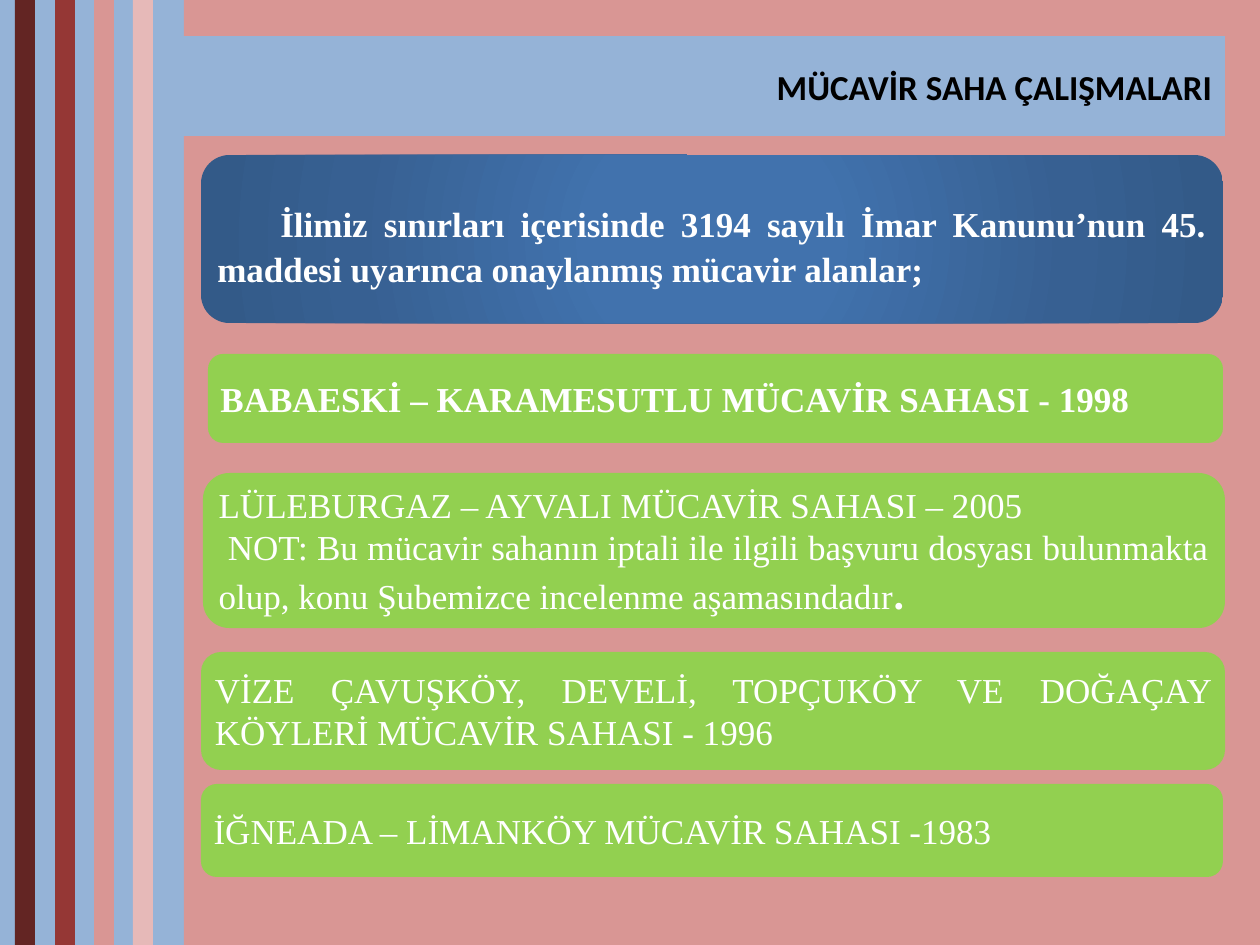
from pptx import Presentation, oxml
from pptx import util as u
from pptx.dml.color import RGBColor
from pptx.enum import shapes, text
from pptx.oxml.ns import nsdecls

PX = u.Inches(1) / 126
BLUE = RGBColor(0x95, 0xB3, 0xD7)
ROSE = RGBColor(0xD9, 0x96, 0x94)
MAROON = RGBColor(0x63, 0x25, 0x23)
BRICK = RGBColor(0x95, 0x37, 0x35)
BLUSH = RGBColor(0xE6, 0xB9, 0xB8)
GREEN = RGBColor(0x92, 0xD0, 0x50)
WHITE = RGBColor(0xFF, 0xFF, 0xFF)
BLACK = RGBColor(0, 0, 0)
GLOW = [(0, "4172AD"), (23, "4172AD"), (69, "376092"), (97, "335A88")]


def block(kind, box, color):
    """Add a plain shape without line or shadow; box is in px."""
    shape = slide.shapes.add_shape(kind, *[round(n * PX) for n in box])
    shape.shadow.inherit = False
    shape.fill.solid()
    shape.fill.fore_color.rgb = color
    shape.line.fill.background()
    return shape


def style(run, font, size, color, bold):
    run.font.name = font
    run.font.size = u.Pt(size)
    run.font.color.rgb = color
    run.font.bold = bold


prs = Presentation()
prs.slide_width = round(1260 * PX)
prs.slide_height = round(945 * PX)
slide = prs.slides.add_slide(prs.slide_layouts[5])

# Backdrop
RECT = shapes.MSO_SHAPE.RECTANGLE
block(RECT, (0, 0, 184, 945), BLUE)
block(RECT, (184, 0, 1076, 945), ROSE)

# Title on a rounded bar
title = slide.shapes.title
slide.shapes._spTree.append(title._element)
title.left, title.top, title.width, title.height = [
    round(n * PX) for n in (154, 36, 1071, 100)]
title._element.spPr.append(oxml.parse_xml(
    f'<a:prstGeom {nsdecls("a")} prst="roundRect"><a:avLst/></a:prstGeom>'))
title.fill.solid()
title.fill.fore_color.rgb = BLUE
frame = title.text_frame
frame.text = "MÜCAVİR SAHA ÇALIŞMALARI"
frame.vertical_anchor = text.MSO_ANCHOR.MIDDLE
frame.paragraphs[0].alignment = text.PP_ALIGN.RIGHT
style(frame.paragraphs[0].runs[0], "Calibri", 20, BLACK, True)

# Stripes
for i, color in enumerate((MAROON, BRICK, ROSE, BLUSH)):
    block(RECT, (15 + round(39.5 * i), 0, 20, 945), color)

# Panels: box, then paragraphs of (words, size, bold)
PANELS = [
    ((201, 155, 1022, 168), [[
        ("\t", 28, True),
        ("İlimiz sınırları içerisinde 3194 sayılı İmar Kanunu’nun "
         "45. maddesi uyarınca onaylanmış mücavir alanlar;", 20, True)]]),
    ((208, 354, 1015, 89), [[
        ("BABAESKİ – KARAMESUTLU MÜCAVİR SAHASI - 1998", 20, True)]]),
    ((203, 473, 1022, 155), [
        [("LÜLEBURGAZ – AYVALI MÜCAVİR SAHASI – 2005", 20, False)],
        [(" NOT: Bu mücavir sahanın iptali ile ilgili başvuru dosyası bulunmakta "
          "olup, konu Şubemizce incelenme aşamasındadır", 20, False),
         (". ", 24, True)]]),
    ((201, 652, 1024, 118), [[
        ("VİZE ÇAVUŞKÖY, DEVELİ, TOPÇUKÖY VE DOĞAÇAY "
         "KÖYLERİ MÜCAVİR SAHASI - 1996", 20, False)]]),
    ((201, 784, 1022, 93), [[
        ("İĞNEADA – LİMANKÖY MÜCAVİR SAHASI -1983 ", 20, False)]]),
]
panels = []
for box, paras in PANELS:
    panel = block(shapes.MSO_SHAPE.ROUNDED_RECTANGLE, box, GREEN)
    panel.adjustments[0] = 0.17
    frame = panel.text_frame
    frame.word_wrap = True
    frame.vertical_anchor = text.MSO_ANCHOR.MIDDLE
    frame.margin_left = frame.margin_right = round(8 * PX)
    frame.margin_top = frame.margin_bottom = round(8 * PX)
    for i, parts in enumerate(paras):
        para = frame.add_paragraph() if i else frame.paragraphs[0]
        para.alignment = text.PP_ALIGN.JUSTIFY
        for words, size, bold in parts:
            run = para.add_run()
            run.text = words
            style(run, "Times New Roman", size, WHITE, bold)
    panels.append(panel)

# The first panel glows from its centre
stops = "".join(f'<a:gs pos="{at * 1000}"><a:srgbClr val="{color}"/></a:gs>'
                for at, color in GLOW)
glow = oxml.parse_xml(
    f'<a:gradFill {nsdecls("a")} rotWithShape="1"><a:gsLst>{stops}</a:gsLst>'
    '<a:path path="circle"><a:fillToRect l="50000" t="50000" r="50000" b="50000"/>'
    '</a:path></a:gradFill>')
props = panels[0]._element.spPr
props.replace(props.find(oxml.ns.qn("a:solidFill")), glow)

prs.save("out.pptx")
